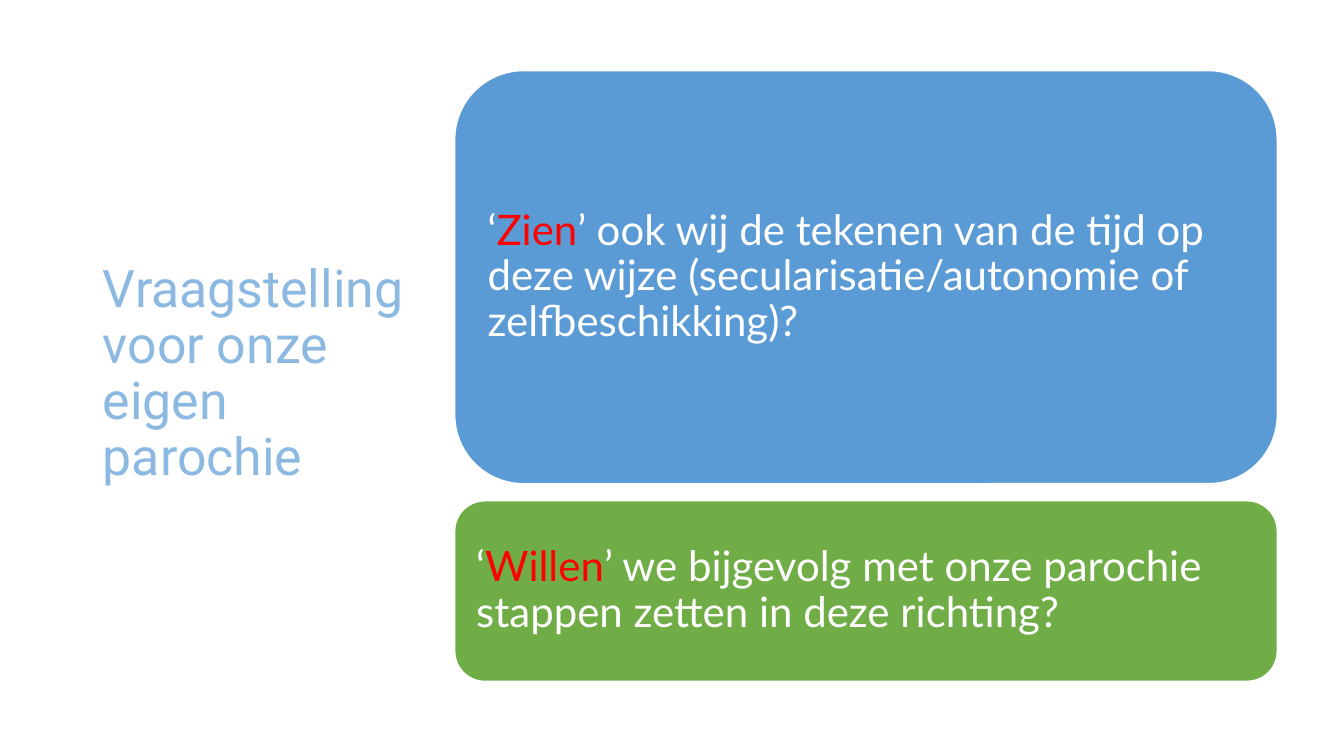
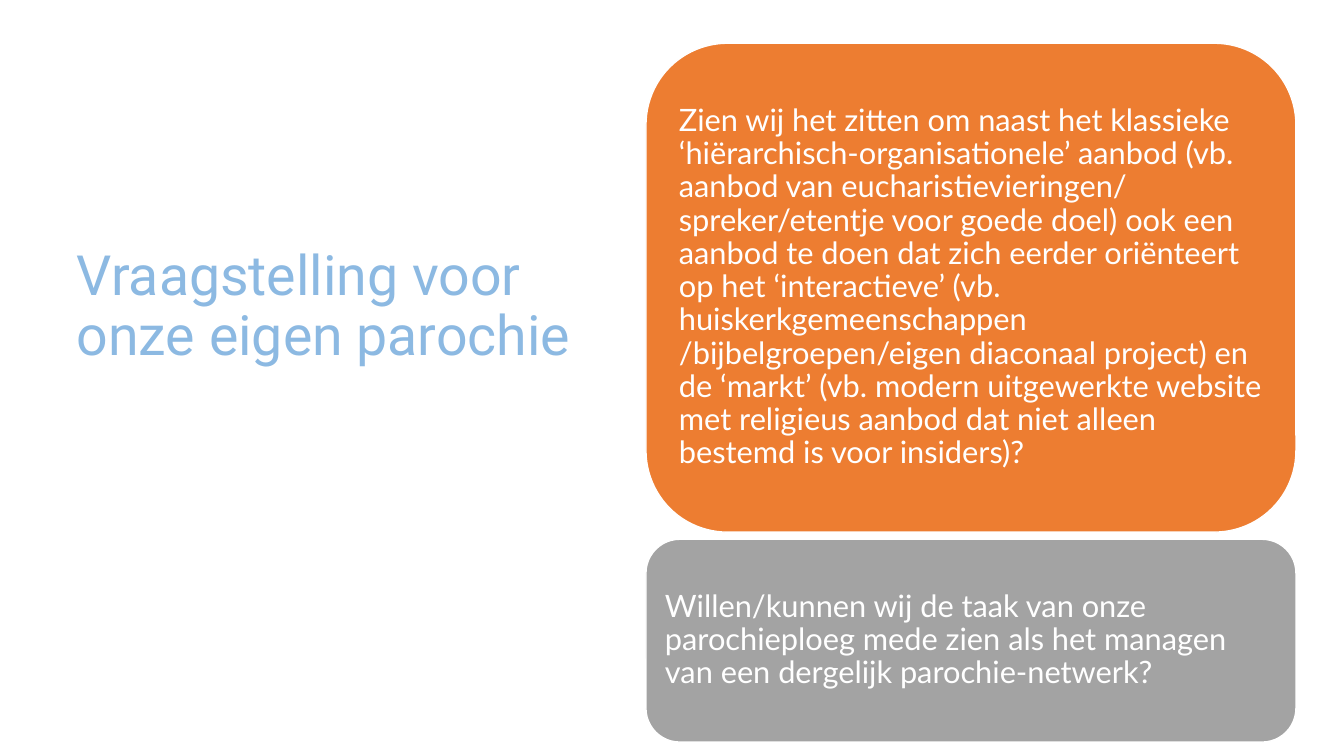
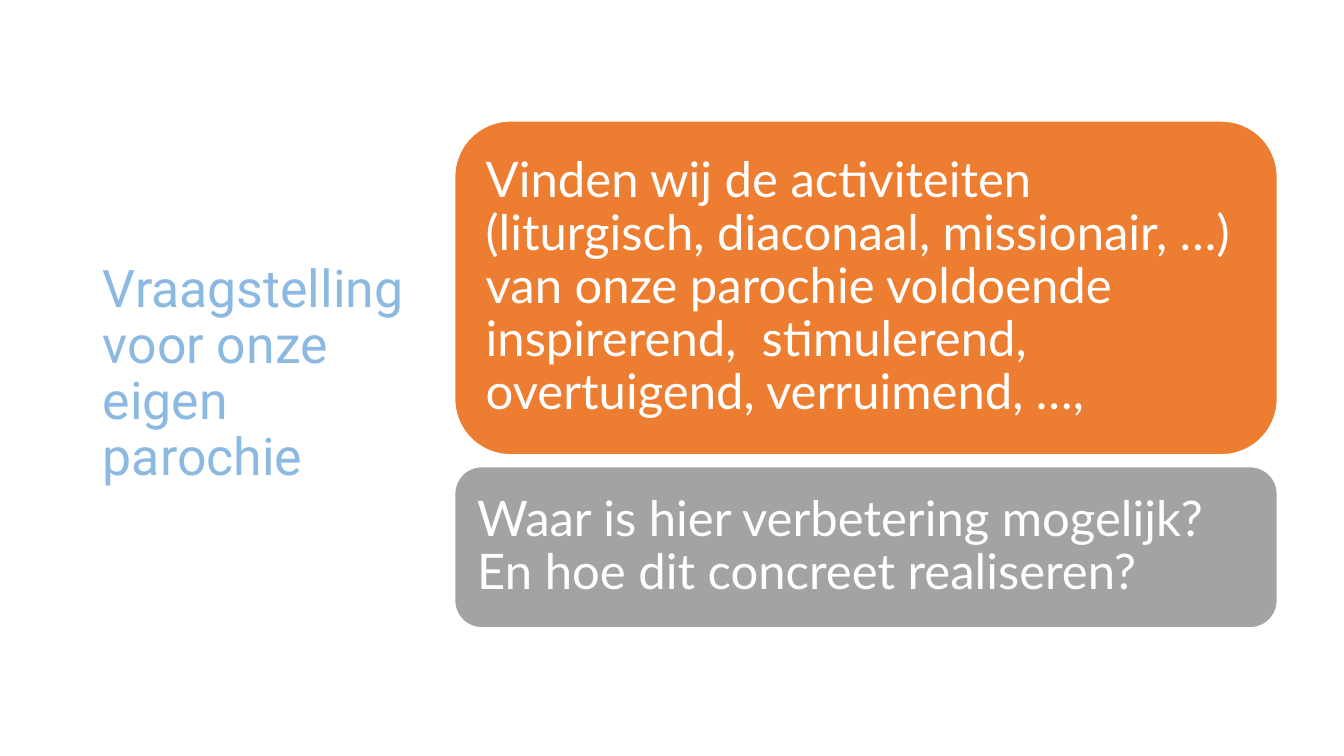
from pptx import Presentation
from pptx.dml.color import RGBColor
from pptx.enum.shapes import MSO_SHAPE
from pptx.enum.text import MSO_ANCHOR, MSO_AUTO_SIZE, PP_ALIGN
from pptx.util import Cm, Pt

WHITE = RGBColor(0xFF, 0xFF, 0xFF)
RED = RGBColor(0xFF, 0x00, 0x00)
BLUE = RGBColor(0x5B, 0x9B, 0xD5)
GREEN = RGBColor(0x70, 0xAD, 0x47)
ORANGE = RGBColor(0xED, 0x7D, 0x31)
GREY = RGBColor(0xA3, 0xA3, 0xA3)
PALE_BLUE = RGBColor(0x8C, 0xB9, 0xE2)

TITLE_FONT = "Roboto"
CARD_FONT = "Lato"
LINE_SPACING = 0.9
INSET_PER_POINT = 0.0106

TITLE = "Vraagstelling voor onze eigen parochie"
SIDE_TITLE = {
    "box": (2.34, 1.7, 8.2, 15.47), "size": 37,
    "frame": {"vertical_anchor": MSO_ANCHOR.MIDDLE},
}
WIDE_TITLE = {
    "box": (1.68, 1.57, 13.39, 9.53), "size": 39.6,
    "frame": {"vertical_anchor": MSO_ANCHOR.TOP, "margin_top": Cm(4.67)},
}
NARROW_COLUMN = (11.46, 20.73)
WIDE_COLUMN = (16.28, 16.38)

SLIDES = [
    {
        "title": SIDE_TITLE, "column": NARROW_COLUMN,
        "top": 1.78, "gap": 0.43, "size": 30,
        "cards": [
            (BLUE, 10.41, [
                ("‘", WHITE), ("Zien", RED),
                ("’ ook wij de tekenen van de tijd op deze wijze "
                 "(secularisatie/autonomie of zelfbeschikking)?", WHITE)]),
            (GREEN, 4.55, [
                ("‘", WHITE), ("Willen", RED),
                ("’ we bijgevolg met onze parochie stappen zetten "
                 "in deze richting?", WHITE)]),
        ],
    },
    {
        "title": WIDE_TITLE, "column": WIDE_COLUMN,
        "top": 1.09, "gap": 0.18, "size": 22,
        "cards": [
            (ORANGE, 12.32, [
                ("Zien wij het zitten om naast het klassieke "
                 "‘hiërarchisch-organisationele’ aanbod (vb. aanbod van "
                 "eucharistievieringen/ spreker/etentje voor goede doel) "
                 "ook een aanbod te doen dat zich eerder oriënteert op het "
                 "‘interactieve’ (vb. huiskerkgemeenschappen "
                 "/bijbelgroepen/eigen diaconaal project) en de ‘markt’ "
                 "(vb. modern uitgewerkte website met religieus aanbod dat "
                 "niet alleen bestemd is voor insiders)?", WHITE)]),
            (GREY, 5.11, [
                ("Willen/kunnen wij de taak van onze parochieploeg mede "
                 "zien als het managen van een dergelijk "
                 "parochie-netwerk?", WHITE)]),
        ],
    },
    {
        "title": SIDE_TITLE, "column": NARROW_COLUMN,
        "top": 3.05, "gap": 0.3, "size": 35,
        "cards": [
            (ORANGE, 8.41, [
                ("Vinden wij de activiteiten (liturgisch, diaconaal, "
                 "missionair, …) van onze parochie voldoende inspirerend,  "
                 "stimulerend, overtuigend, verruimend, …,", WHITE)]),
            (GREY, 4.06, [
                ("Waar is hier verbetering mogelijk? En hoe dit concreet "
                 "realiseren?", WHITE)]),
        ],
    },
]


def apply(target, values):
    for name, value in values.items():
        setattr(target, name, value)


def write(frame, runs, font_name, size):
    paragraph = frame.paragraphs[0]
    apply(paragraph, {"alignment": PP_ALIGN.LEFT, "line_spacing": LINE_SPACING})
    for text, colour in runs:
        run = paragraph.add_run()
        run.text = text
        apply(run.font, {"name": font_name, "size": Pt(size)})
        run.font.color.rgb = colour


def place_title(slide, style):
    title = slide.shapes.title
    apply(title, dict(zip(("left", "top", "width", "height"),
                          map(Cm, style["box"]))))
    frame = title.text_frame
    apply(frame, {"word_wrap": True, "auto_size": MSO_AUTO_SIZE.NONE})
    apply(frame, style["frame"])
    write(frame, [(TITLE, PALE_BLUE)], TITLE_FONT, style["size"])


def add_card(slide, box, colour, runs, size):
    card = slide.shapes.add_shape(MSO_SHAPE.ROUNDED_RECTANGLE, *map(Cm, box))
    card.shadow.inherit = False
    card.fill.solid()
    card.fill.fore_color.rgb = colour
    card.line.color.rgb = WHITE
    card.line.width = Pt(1)
    frame = card.text_frame
    apply(frame, {"word_wrap": True, "vertical_anchor": MSO_ANCHOR.MIDDLE})
    inset = Cm(round(size * INSET_PER_POINT, 2))
    apply(frame, {f"margin_{side}": inset
                  for side in ("left", "top", "right", "bottom")})
    write(frame, runs, CARD_FONT, size)


def main():
    deck = Presentation()
    apply(deck, {"slide_width": Cm(33.87), "slide_height": Cm(19.05)})
    for content in SLIDES:
        slide = deck.slides.add_slide(deck.slide_layouts[5])
        place_title(slide, content["title"])
        left, width = content["column"]
        top = content["top"]
        for colour, height, runs in content["cards"]:
            add_card(slide, (left, top, width, height), colour, runs,
                     content["size"])
            top += height + content["gap"]
    deck.save("out.pptx")


if __name__ == "__main__":
    main()
